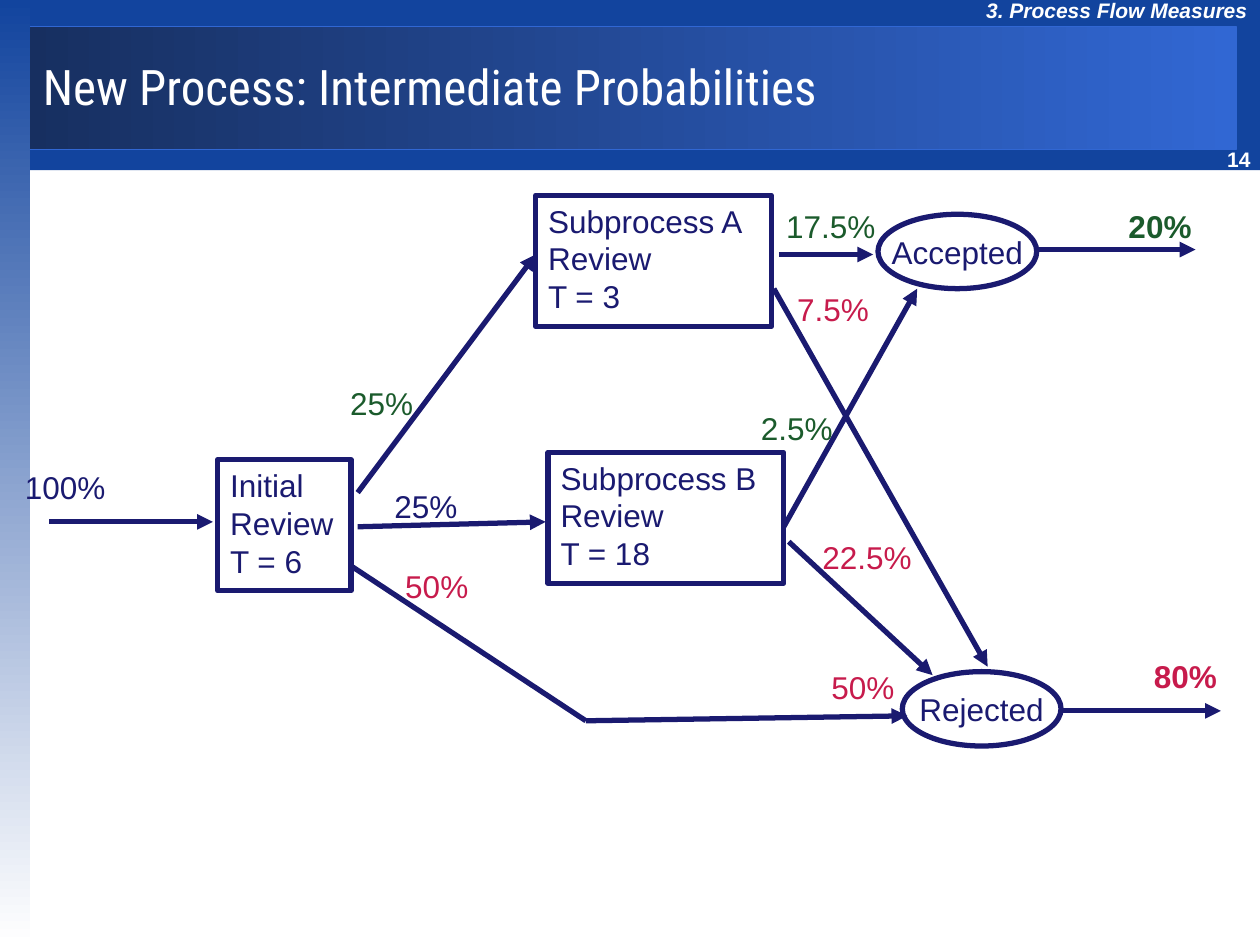
from lxml.etree import SubElement
from pptx import Presentation
from pptx.dml.color import RGBColor
from pptx.enum.shapes import MSO_CONNECTOR as Connector, MSO_SHAPE as Shape
from pptx.enum.text import MSO_ANCHOR as Anchor, MSO_AUTO_SIZE as AutoSize, PP_ALIGN as Align
from pptx.oxml.ns import qn
from pptx.util import Cm, Pt

COLORS = {
    "navy": "1A1A70",
    "green": "1B5B2C",
    "red": "C71B4C",
    "white": "FFFFFF",
    "band": "12449E",
    "title_dark": "172F60",
    "title_light": "3167D3",
}
LINE_WIDTH = Pt(3)
LABEL_HEIGHT = 1.02


def color(name):
    return RGBColor.from_string(COLORS[name])


def write(frame, text, size=18, font="Arial", ink="navy", bold=False, italic=False,
          align=Align.LEFT, anchor=Anchor.TOP, wrap=False):
    frame.word_wrap = wrap
    frame.auto_size = AutoSize.NONE
    frame.vertical_anchor = anchor
    frame.text = text
    for paragraph in frame.paragraphs:
        paragraph.alignment = align
        style = paragraph.font
        style.size, style.name = Pt(size), font
        style.bold, style.italic = bold, italic
        style.color.rgb = color(ink)


def add_text(slide, left, top, width, height, text, **style):
    box = slide.shapes.add_textbox(Cm(left), Cm(top), Cm(width), Cm(height))
    write(box.text_frame, text, **style)


def add_band(slide, left, top, width, height, *inks, angle=0, outline=None):
    band = slide.shapes.add_shape(Shape.RECTANGLE, Cm(left), Cm(top), Cm(width), Cm(height))
    band.shadow.inherit = False
    if len(inks) == 1:
        band.fill.solid()
        band.fill.fore_color.rgb = color(inks[0])
    else:
        band.fill.gradient()
        band.fill.gradient_angle = angle
        for stop, ink in zip(band.fill.gradient_stops, inks):
            stop.color.rgb = color(ink)
    if outline:
        band.line.color.rgb = color(outline)
        band.line.width = Pt(0.75)
    else:
        band.line.fill.background()


def add_step(slide, kind, left, top, width, height, text, **style):
    step = slide.shapes.add_shape(kind, Cm(left), Cm(top), Cm(width), Cm(height))
    step.shadow.inherit = False
    step.fill.background()
    step.line.color.rgb = color("navy")
    step.line.width = LINE_WIDTH
    write(step.text_frame, text, **style)


def add_flow_line(slide, start_x, start_y, end_x, end_y, arrow=True):
    flow_line = slide.shapes.add_connector(
        Connector.STRAIGHT, Cm(start_x), Cm(start_y), Cm(end_x), Cm(end_y))
    flow_line.line.color.rgb = color("navy")
    flow_line.line.width = LINE_WIDTH
    if arrow:
        SubElement(flow_line.line._get_or_add_ln(), qn("a:tailEnd"), type="triangle")
    SubElement(flow_line.element.spPr, qn("a:effectLst"))


def build_frame(slide, left, top, width, height):
    # Bands along the top and the left edge
    add_band(slide, left + 0.51, top, width - 0.51, 3.43, "band")
    add_band(slide, left + 0.51, top + 0.53, width - 0.99, 2.49,
             "title_dark", "title_light", outline="title_light")
    add_band(slide, left, top, 0.61, height, "band", "white", angle=270)

    # Page number and chapter name
    small = {"size": 12, "ink": "white", "bold": True}
    add_text(slide, left + width - 0.91, top + 2.82, 1.02, 0.76, "14", **small)
    add_text(slide, left + width - 5.77, top - 0.18, 5.77, 0.76,
             "3. Process Flow Measures", italic=True, **small)

    # Title, brought in front of the bands
    title = slide.shapes.title
    title.left, title.top = Cm(left + 0.61), Cm(top + 0.53)
    title.width, title.height = Cm(width - 0.61), Cm(2.39)
    write(title.text_frame, "New Process: Intermediate Probabilities", size=28,
          font="Roboto Condensed", ink="white", anchor=Anchor.MIDDLE, wrap=True)
    title.element.getparent().append(title.element)


def build_flow(slide, left, top):
    # Review steps
    reviews = [
        (4.14, 5.33, 2.69, "Initial\nReview\nT = 6"),
        (10.55, 0, 4.75, "Subprocess A\nReview\nT = 3"),
        (10.8, 5.18, 4.75, "Subprocess B\nReview\nT = 18"),
    ]
    for x, y, width, text in reviews:
        add_step(slide, Shape.RECTANGLE, left + x, top + y, width, 2.64, text, wrap=True)

    # Outcomes
    for x, y, text in [(17.45, 0.38, "Accepted"), (17.94, 9.6, "Rejected")]:
        add_step(slide, Shape.OVAL, left + x, top + y, 3.2, 1.5, text,
                 align=Align.CENTER, anchor=Anchor.MIDDLE)

    # Routes; the first part of the direct rejection has no arrowhead
    bend = (11.56, 10.59)
    routes = [
        (0.74, 6.58, 4.04, 6.58),
        (6.96, 5.99, 10.55, 1.19),
        (6.96, 6.68, 10.75, 6.58),
        (*bend, 18.04, 10.49),
        (15.45, 1.19, 17.35, 1.19),
        (15.35, 1.88, 19.66, 9.5),
        (15.55, 6.68, 18.24, 1.88),
        (15.65, 6.98, 18.55, 9.67),
        (20.65, 1.09, 23.85, 1.09),
        (21.16, 10.39, 24.36, 10.39),
    ]
    for x1, y1, x2, y2 in routes:
        add_flow_line(slide, left + x1, top + y1, left + x2, top + y2)
    add_flow_line(slide, left + 6.86, top + 7.49, left + bend[0], top + bend[1], arrow=False)

    # Probabilities
    label_widths = {"100%": 2.13, "17.5%": 2.31, "22.5%": 2.31, "7.5%": 1.96, "2.5%": 1.96}
    probabilities = [
        (0, 5.38, "100%", "navy", False),
        (6.56, 3.68, "25%", "green", False),
        (7.67, 7.36, "50%", "red", False),
        (7.45, 5.76, "25%", "navy", False),
        (15.35, 0.1, "17.5%", "green", False),
        (15.57, 1.78, "7.5%", "red", False),
        (16.08, 6.78, "22.5%", "red", False),
        (14.84, 4.19, "2.5%", "green", False),
        (22.76, 9.19, "80%", "red", True),
        (22.25, 0.1, "20%", "green", True),
        (16.26, 9.4, "50%", "red", False),
    ]
    for x, y, share, ink, bold in probabilities:
        add_text(slide, left + x, top + y, label_widths.get(share, 1.78), LABEL_HEIGHT,
                 share, ink=ink, bold=bold)


def main():
    deck = Presentation()
    deck.slide_width, deck.slide_height = Cm(25.4), Cm(19.05)
    slide = deck.slides.add_slide(deck.slide_layouts[5])
    build_frame(slide, 0, 0, 25.4, 19.05)
    build_flow(slide, 0.25, 3.94)
    deck.save("out.pptx")


if __name__ == "__main__":
    main()
